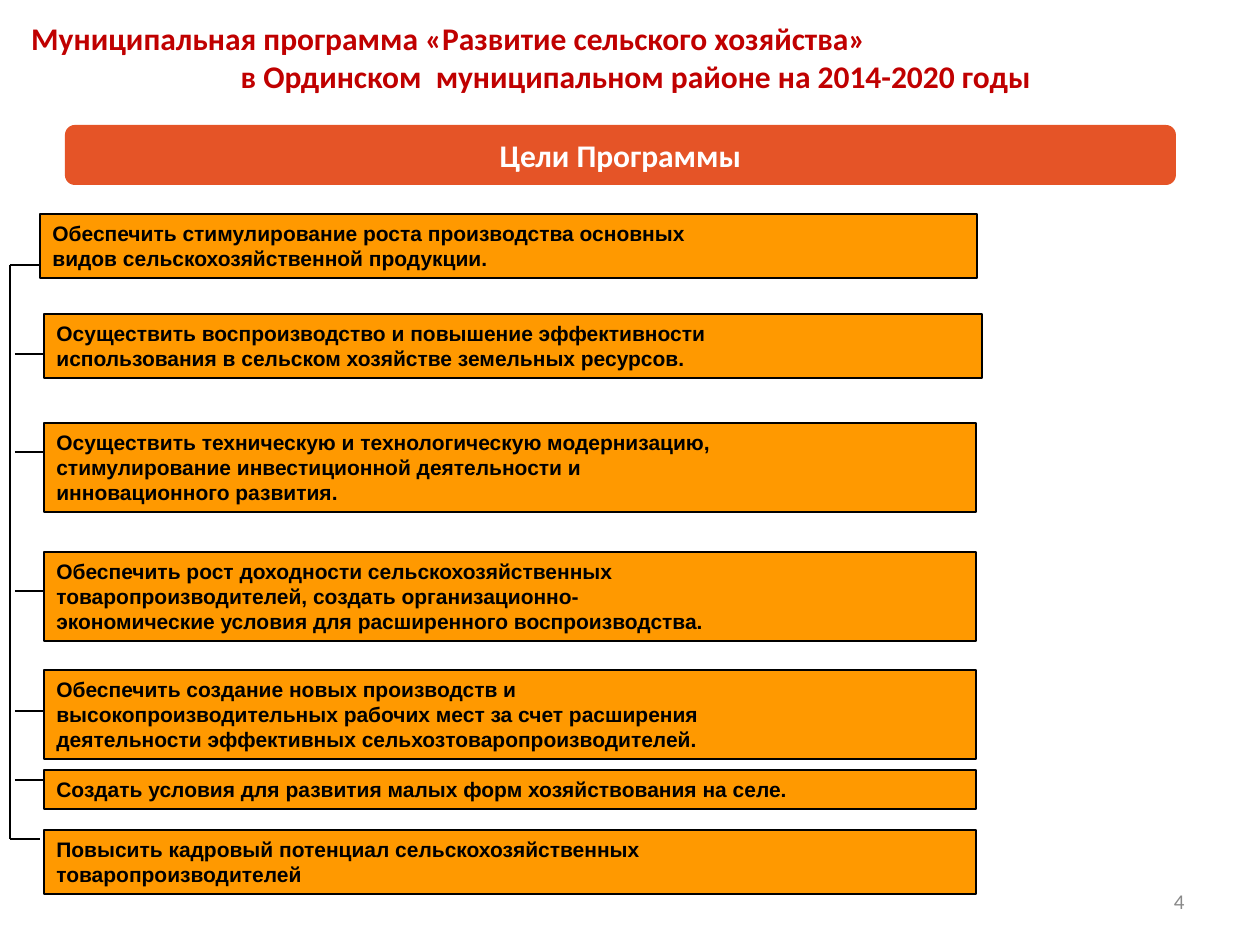
from collections import namedtuple

from lxml.etree import SubElement
from pptx import Presentation
from pptx.dml.color import RGBColor
from pptx.enum.shapes import MSO_CONNECTOR, MSO_SHAPE
from pptx.enum.text import MSO_ANCHOR, MSO_AUTO_SIZE, PP_ALIGN
from pptx.oxml.ns import qn
from pptx.util import Emu, Pt

PX_PER_INCH = 126
Box = namedtuple("Box", "left top width height")
Goal = namedtuple("Goal", "left top width stub_left stub_top lines")


class Theme:
    title = {"name": "Calibri", "size": Pt(18), "bold": True, "color": "C00000"}
    banner = {"name": "Calibri", "size": Pt(18), "bold": True, "color": "FFFFFF"}
    goal = {"name": "Arial", "size": Pt(12), "bold": True, "color": "000000"}
    number = {"name": "Calibri", "size": Pt(12), "bold": False, "color": "898989"}
    banner_fill = "E55427"
    goal_fill = "FF9900"
    line = "000000"
    line_width = Pt(0.75)


# Positions are relative to the goals region
GOALS = [
    Goal(30, 0, 937, 0, 51, [
        "Обеспечить стимулирование роста производства основных",
        "видов сельскохозяйственной продукции."]),
    Goal(34, 100, 938, 5, 140, [
        "Осуществить воспроизводство и повышение эффективности",
        "использования в сельском хозяйстве земельных ресурсов."]),
    Goal(34, 209, 932, 5, 238, [
        "Осуществить техническую и технологическую модернизацию,",
        "стимулирование инвестиционной деятельности и",
        "инновационного развития."]),
    Goal(34, 338, 932, 5, 377, [
        "Обеспечить рост доходности сельскохозяйственных",
        "товаропроизводителей, создать организационно-",
        "экономические условия для расширенного воспроизводства."]),
    Goal(34, 456, 932, 5, 497, [
        "Обеспечить создание новых производств и",
        "высокопроизводительных рабочих мест за счет расширения",
        "деятельности эффективных сельхозтоваропроизводителей."]),
    Goal(34, 556, 932, 5, 566, [
        "Создать условия для развития малых форм хозяйствования на селе."]),
    Goal(34, 616, 932, 0, 625, [
        "Повысить кадровый потенциал сельскохозяйственных",
        "товаропроизводителей"]),
]
STUB_LENGTH = 30
GOAL_PADDING = 14
GOAL_LINE_HEIGHT = 25


def px(length):
    return Emu(round(length * 914400 / PX_PER_INCH))


def color(value):
    return RGBColor.from_string(value)


def write(paragraph, text, style, alignment):
    """Fill a paragraph; a vertical tab in the text is a line break."""
    paragraph.text = text
    paragraph.alignment = alignment
    for run in paragraph.runs:
        for name, value in style.items():
            if name == "color":
                run.font.color.rgb = color(value)
            else:
                setattr(run.font, name, value)


def add_panel(slide, preset, box, fill=None, outline=None):
    shape = slide.shapes.add_shape(preset, *map(px, box))
    shape.shadow.inherit = False
    if fill:
        shape.fill.solid()
        shape.fill.fore_color.rgb = color(fill)
    else:
        shape.fill.background()
    if outline:
        shape.line.color.rgb = color(outline)
        shape.line.width = Theme.line_width
    else:
        shape.line.fill.background()
    frame = shape.text_frame
    frame.word_wrap = True
    frame.vertical_anchor = MSO_ANCHOR.MIDDLE
    return shape


def add_line(slide, *ends):
    connector = slide.shapes.add_connector(MSO_CONNECTOR.STRAIGHT, *map(px, ends))
    connector.line.color.rgb = color(Theme.line)
    connector.line.width = Theme.line_width
    SubElement(connector._element.spPr, qn("a:effectLst"))


def add_title(slide, box):
    frame = add_panel(slide, MSO_SHAPE.ROUNDED_RECTANGLE, box).text_frame
    write(frame.paragraphs[0], "Муниципальная программа «Развитие сельского хозяйства»",
          Theme.title, PP_ALIGN.LEFT)
    second = frame.add_paragraph()
    write(second, "в Ординском  муниципальном районе на 2014-2020 годы",
          Theme.title, PP_ALIGN.CENTER)
    second._p.get_or_add_pPr().set("marL", str(px(12)))


def add_banner(slide, box):
    shape = add_panel(slide, MSO_SHAPE.ROUNDED_RECTANGLE, box, Theme.banner_fill)
    write(shape.text_frame.paragraphs[0], "Цели Программы", Theme.banner, PP_ALIGN.CENTER)


def add_goals(slide, box):
    """Draw the goal boxes, their stubs and the trunk along the left edge."""
    for goal in GOALS:
        height = GOAL_PADDING + GOAL_LINE_HEIGHT * len(goal.lines)
        goal_box = Box(box.left + goal.left, box.top + goal.top, goal.width, height)
        shape = add_panel(slide, MSO_SHAPE.RECTANGLE, goal_box, Theme.goal_fill, Theme.line)
        frame = shape.text_frame
        frame.vertical_anchor = MSO_ANCHOR.TOP
        frame.auto_size = MSO_AUTO_SIZE.SHAPE_TO_FIT_TEXT
        write(frame.paragraphs[0], "\v".join(goal.lines), Theme.goal, PP_ALIGN.LEFT)
        left, top = box.left + goal.stub_left, box.top + goal.stub_top
        add_line(slide, left, top, left + STUB_LENGTH, top)
    add_line(slide, box.left, box.top + GOALS[0].stub_top,
             box.left, box.top + GOALS[-1].stub_top)


def add_slide_number(slide, box):
    frame = slide.shapes.add_textbox(*map(px, box)).text_frame
    frame.word_wrap = True
    frame.vertical_anchor = MSO_ANCHOR.MIDDLE
    write(frame.paragraphs[0], "4", Theme.number, PP_ALIGN.RIGHT)


def main():
    presentation = Presentation()
    presentation.slide_width = px(1260)
    presentation.slide_height = px(945)
    slide = presentation.slides.add_slide(presentation.slide_layouts[6])
    add_slide_number(slide, Box(903, 876, 294, 50))
    add_title(slide, Box(15, 17, 1230, 79))
    add_banner(slide, Box(65, 125, 1111, 60))
    add_goals(slide, Box(10, 214, 972, 680))
    presentation.save("out.pptx")


if __name__ == "__main__":
    main()
